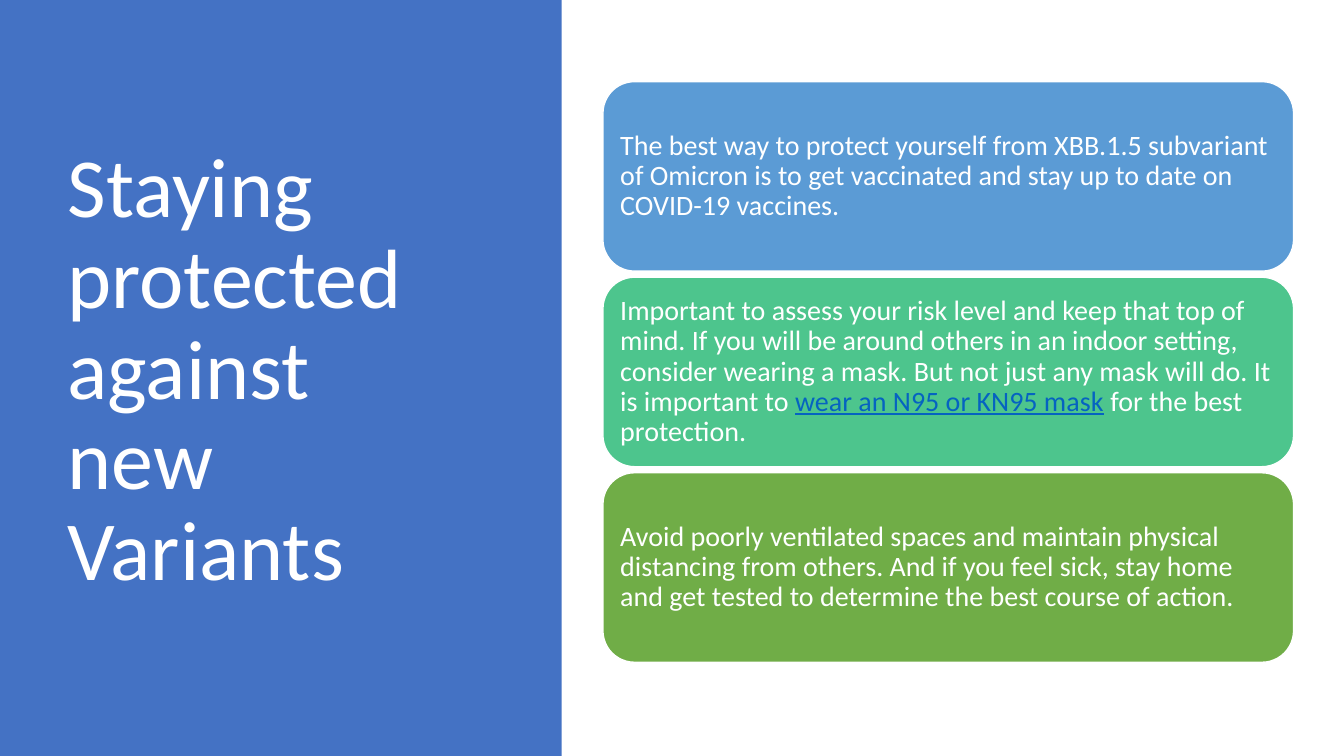
import pptx
import pptx.util
import pptx.dml.color
import pptx.enum.shapes
import pptx.enum.text

Inches = pptx.util.Inches
Pt = pptx.util.Pt
Shape = pptx.enum.shapes.MSO_SHAPE

COLORS = {
    "panel": "4472C4",
    "blue": "5B9BD5",
    "mint": "4DC58D",
    "green": "70AD47",
    "white": "FFFFFF",
    "link": "0563C1",
}

CARDS = [
    ("blue", [
        ("The best way to protect yourself from XBB.1.5 subvariant of Omicron "
         "is to get vaccinated and stay up to date on COVID-19 vaccines.", False),
    ]),
    ("mint", [
        ("Important to assess your risk level and keep that top of mind. "
         "If you will be around others in an indoor setting, consider wearing "
         "a mask. But not just any mask will do. It is important to ", False),
        ("wear an N95 or KN95 mask", True),
        (" for the best protection.", False),
    ]),
    ("green", [
        ("Avoid poorly ventilated spaces and maintain physical distancing from "
         "others. And if you feel sick, stay home and get tested to determine "
         "the best course of action.", False),
    ]),
]


def color(name):
    return pptx.dml.color.RGBColor.from_string(COLORS[name])


def add_box(slide, kind, left, top, width, height, fill):
    box = slide.shapes.add_shape(
        kind, Inches(left), Inches(top), Inches(width), Inches(height))
    box.shadow.inherit = False
    box.fill.solid()
    box.fill.fore_color.rgb = color(fill)
    box.line.fill.background()
    return box


def set_frame(frame, side, edge):
    frame.word_wrap = True
    frame.auto_size = pptx.enum.text.MSO_AUTO_SIZE.NONE
    frame.vertical_anchor = pptx.enum.text.MSO_ANCHOR.MIDDLE
    frame.margin_left = frame.margin_right = Inches(side)
    frame.margin_top = frame.margin_bottom = Inches(edge)
    para = frame.paragraphs[0]
    para.alignment = pptx.enum.text.PP_ALIGN.LEFT
    para.line_spacing = 0.9
    return para


def add_run(para, text, size, tone="white", under=False):
    run = para.add_run()
    run.text = text
    run.font.name = "Calibri"
    run.font.size = Pt(size)
    run.font.color.rgb = color(tone)
    run.font.underline = under


def add_panel(slide):
    panel = add_box(slide, Shape.RECTANGLE, 0, 0, 5.57, 7.5, "panel")
    title = slide.shapes.title
    title.element.addprevious(panel.element)


def set_title(slide, text):
    title = slide.shapes.title
    title.left, title.top = Inches(0.57), Inches(0.68)
    title.width, title.height = Inches(4.15), Inches(6.02)
    para = set_frame(title.text_frame, 0.1, 0.05)
    add_run(para, text, 60)


def add_card(slide, top, fill, runs):
    card = add_box(slide, Shape.ROUNDED_RECTANGLE, 5.98, top, 6.85, 1.88, fill)
    card.line.color.rgb = color("white")
    card.line.width = Pt(1)
    para = set_frame(card.text_frame, 0.08, 0.08)
    para.space_after = Pt(7)
    for text, link in runs:
        add_run(para, text, 20, "link" if link else "white", link)


def main():
    deck = pptx.Presentation()
    deck.slide_width, deck.slide_height = Inches(13.33), Inches(7.5)
    slide = deck.slides.add_slide(deck.slide_layouts[5])
    add_panel(slide)
    set_title(slide, "Staying protected against new Variants")
    for row, (fill, runs) in enumerate(CARDS):
        add_card(slide, 0.81 + row * 1.94, fill, runs)
    deck.save("out.pptx")


if __name__ == "__main__":
    main()
